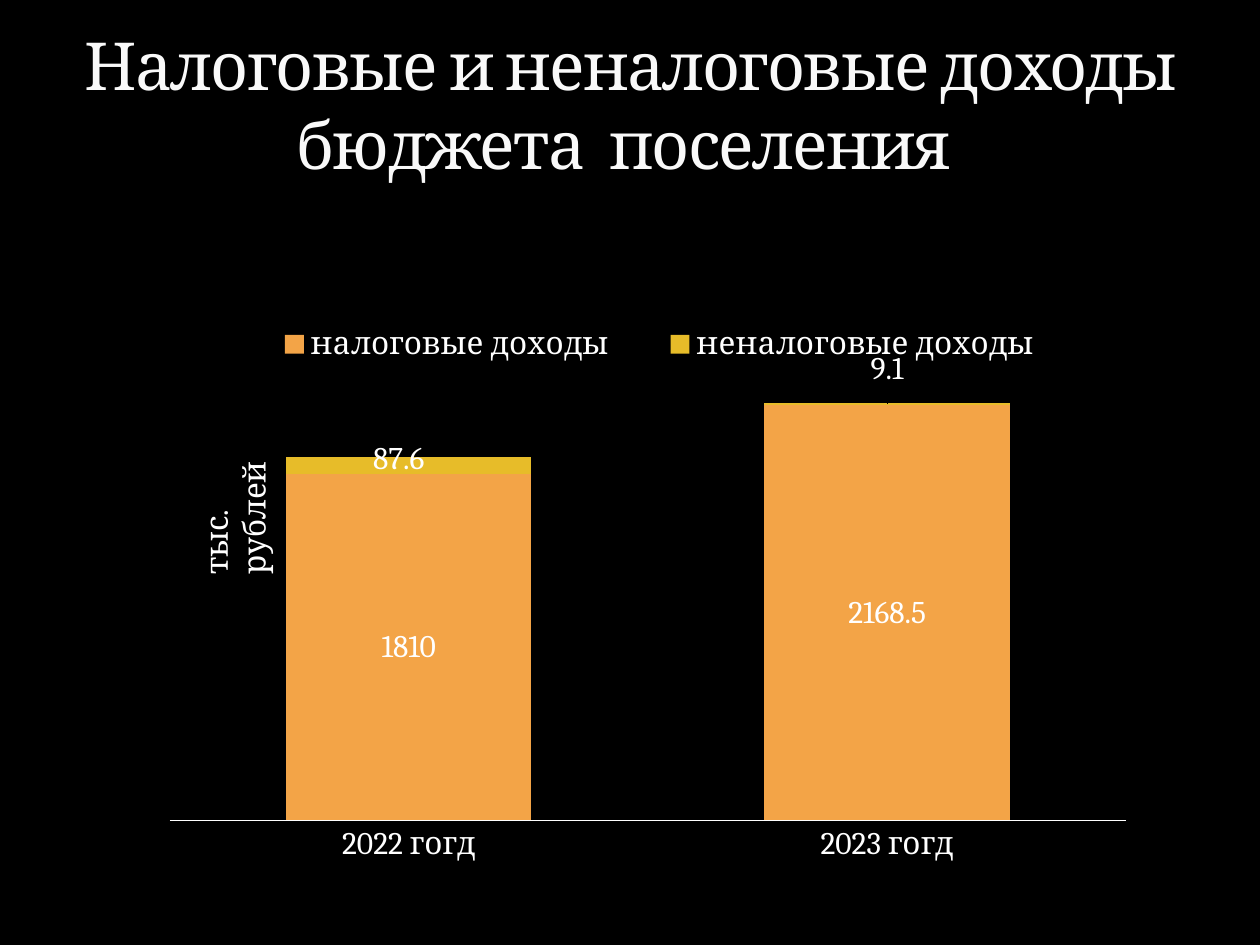
from lxml.etree import SubElement
from pptx import Presentation
from pptx.chart.data import CategoryChartData
from pptx.dml.color import RGBColor
from pptx.enum.chart import XL_CHART_TYPE, XL_LABEL_POSITION, XL_LEGEND_POSITION, XL_TICK_LABEL_POSITION, XL_TICK_MARK
from pptx.enum.text import MSO_ANCHOR, PP_ALIGN
from pptx.oxml import parse_xml
from pptx.oxml.ns import nsdecls, qn
from pptx.util import Inches, Pt

FONT = "Cambria"
HUES = {"back": "000000", "text": "FFFFFF", "title": "F9F9F9", "edge": "3C4422",
        "tax": "F3A447", "other": "E7BC29"}
YEARS = ["2022 гогд", "2023 гогд"]
ROWS = [("налоговые доходы", (1810, 2168.5), "tax"),
        ("неналоговые доходы", (87.6, 9.1), "other")]
SHIFTS = [(-0.01, -0.01), (0, -0.06)]


def tint(name):
    """Return the named colour."""
    return RGBColor.from_string(HUES[name])


def style(font, size, hue):
    """Set face, size and colour of a font."""
    font.name, font.size = FONT, Pt(size)
    font.color.rgb = tint(hue)


def layout(**parts):
    """Return a manual chart layout with the given parts."""
    node = parse_xml(f"<c:layout {nsdecls('c')}><c:manualLayout/></c:layout>")
    for tag, val in parts.items():
        SubElement(node[0], qn(f"c:{tag}")).set("val", str(val))
    return node


def add_text(slide, box, text, size, hue):
    """Add a wrapped text box and return its shape and run."""
    shape = slide.shapes.add_textbox(*map(Inches, box))
    shape.text_frame.word_wrap = True
    run = shape.text_frame.paragraphs[0].add_run()
    run.text = text
    style(run.font, size, hue)
    return shape, run


def add_title(slide, box):
    """Add the centred slide title with its faint outline."""
    shape, run = add_text(slide, box, "Налоговые и неналоговые доходы бюджета  поселения ", 37.8, "title")
    shape.text_frame.vertical_anchor = MSO_ANCHOR.BOTTOM
    shape.text_frame.paragraphs[0].alignment = PP_ALIGN.CENTER
    props = run.font._element
    props.set("spc", "-100")
    props.insert(0, parse_xml(
        f'<a:ln {nsdecls("a")} w="3175"><a:solidFill><a:srgbClr val="{HUES["edge"]}">'
        '<a:alpha val="25000"/></a:srgbClr></a:solidFill></a:ln>'))


def add_unit(slide, box):
    """Add the upright unit label."""
    shape, _ = add_text(slide, box, "тыс. рублей", 18, "text")
    shape.rotation = 270


def set_axes(chart):
    """Show the category line and hide the value axis."""
    cat, val = chart.category_axis, chart.value_axis
    cat.major_tick_mark = XL_TICK_MARK.NONE
    cat.format.line.color.rgb = tint("text")
    cat.format.line.width = Pt(1)
    val.minimum_scale, val.maximum_scale = 0, 2500
    val.has_major_gridlines = False
    val.tick_label_position = XL_TICK_LABEL_POSITION.NONE
    val.visible = False


def set_legend(chart):
    """Place the legend along the top."""
    chart.has_legend = True
    legend = chart.legend
    legend.position = XL_LEGEND_POSITION.TOP
    legend.include_in_layout = False
    style(legend.font, 18, "text")
    for old in legend._element.findall(qn("c:layout")):
        legend._element.remove(old)
    spot = layout(xMode="edge", yMode="edge", x=0.08, y=0.03, w=0.85, h=0.08)
    legend._element.find(qn("c:legendPos")).addnext(spot)


def set_bars(plot):
    """Colour the bars and label their values."""
    plot.gap_width, plot.overlap = 95, 100
    for bar, (_, _, hue) in zip(plot.series, ROWS):
        bar.format.fill.solid()
        bar.format.fill.fore_color.rgb = tint(hue)
        bar.data_labels.show_value = True
        style(bar.data_labels.font, 18, "text")
    bar = plot.series[1]
    for i, (dx, dy) in enumerate(SHIFTS):
        label = bar.points[i].data_label
        style(label.font, 18, "text")
        label.position = XL_LABEL_POSITION.CENTER
        idx = bar._element.xpath(f"c:dLbls/c:dLbl/c:idx[@val='{i}']")[0]
        idx.addnext(layout(x=dx, y=dy))


def add_bars(slide, box):
    """Add the stacked revenue chart."""
    data = CategoryChartData()
    data.categories = YEARS
    for name, vals, _ in ROWS:
        data.add_series(name, vals)
    chart = slide.shapes.add_chart(XL_CHART_TYPE.COLUMN_STACKED, *map(Inches, box), data).chart
    chart.has_title = False
    style(chart.font, 18, "text")
    set_axes(chart)
    set_legend(chart)
    set_bars(chart.plots[0])
    area = chart._chartSpace.chart.plotArea
    for old in area.findall(qn("c:layout")):
        area.remove(old)
    area.insert(0, layout(layoutTarget="inner", xMode="edge", yMode="edge",
                          x=0.016, y=0.065, w=0.955, h=0.825))


def main():
    """Build and save the slide."""
    deck = Presentation()
    deck.slide_width, deck.slide_height = Inches(10), Inches(7.5)
    slide = deck.slides.add_slide(deck.slide_layouts[6])
    slide.background.fill.solid()
    slide.background.fill.fore_color.rgb = tint("back")
    add_bars(slide, (1.22, 2.41, 7.95, 4.61))
    add_title(slide, (0.5, 0.17, 9, 1.33))
    add_unit(slide, (0.98, 3.73, 1.46, 0.4))
    deck.save("out.pptx")


if __name__ == "__main__":
    main()
